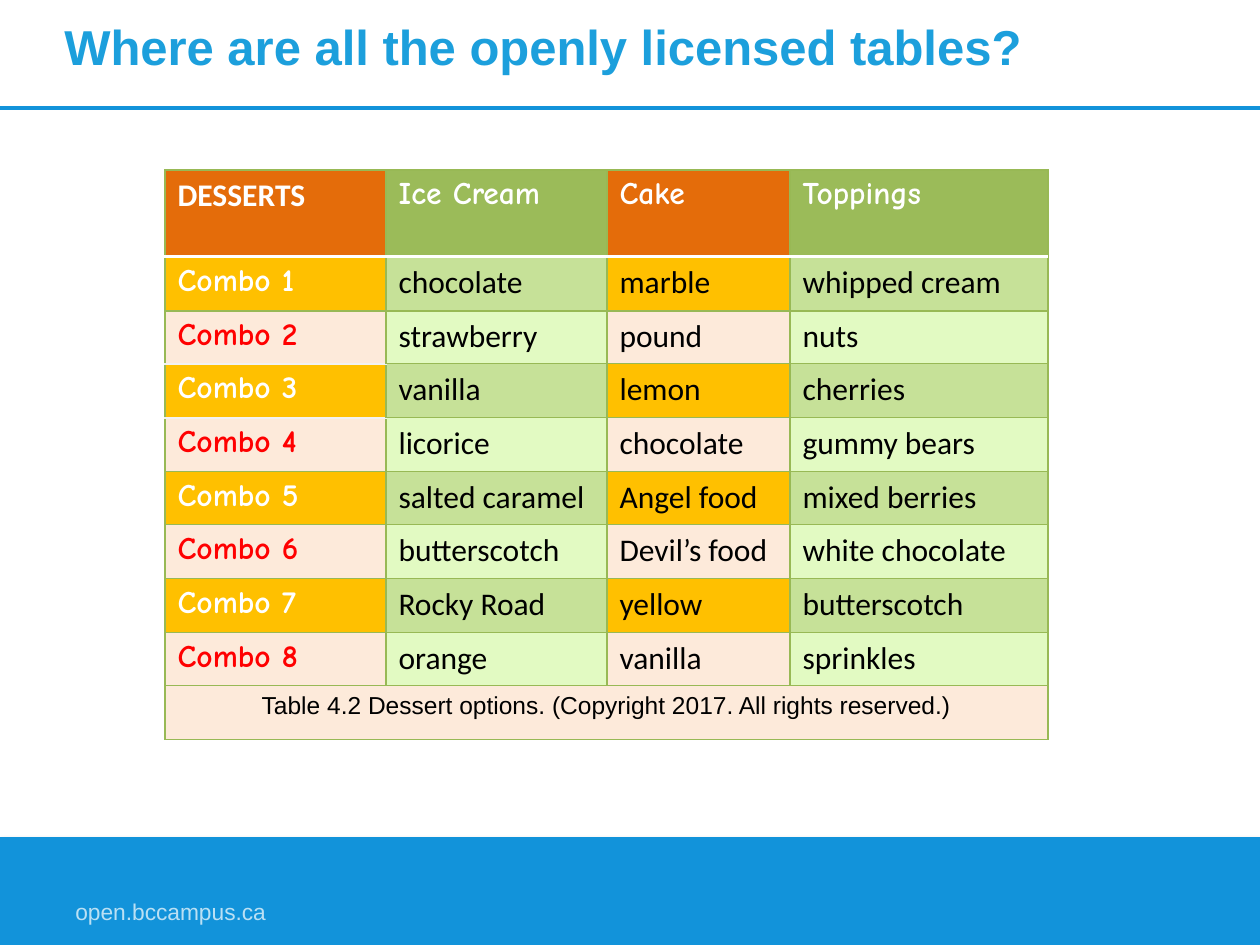
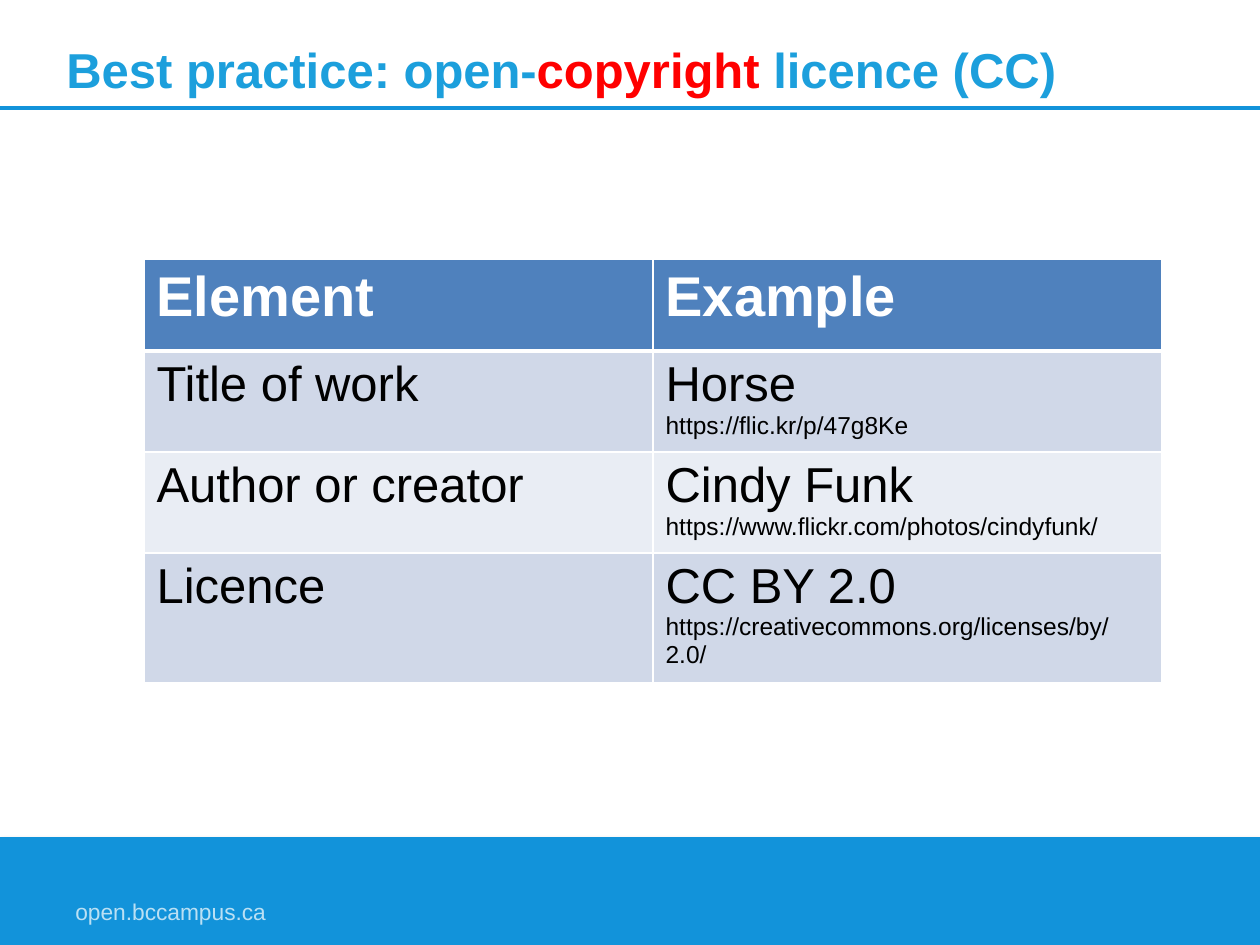
from dataclasses import dataclass
from itertools import cycle

from lxml.etree import SubElement
from pptx import Presentation
from pptx.dml.color import RGBColor
from pptx.enum.shapes import MSO_CONNECTOR, MSO_SHAPE
from pptx.enum.text import MSO_ANCHOR, PP_ALIGN
from pptx.oxml.ns import qn
from pptx.util import Emu, Pt

SCALE = 914400 / 126
WIDE, HIGH = 1260, 945


def px(n):
    return Emu(round(n * SCALE))


def share(total, count):
    """Split a length into whole parts that differ by one at most."""
    ends = [round(total * i / count) for i in range(count + 1)]
    return [b - a for a, b in zip(ends, ends[1:])]


@dataclass(frozen=True)
class Type:
    size: int
    color: str
    bold: bool = False
    face: str = "Arial"


@dataclass(frozen=True)
class Theme:
    white: str = "FFFFFF"
    blue: str = "1293DA"
    orange: str = "E46C0A"
    green: str = "9BBB59"
    gold: str = "FFC000"
    peach: str = "FDEADA"
    leaf: str = "C6E198"
    lime: str = "E2FAC2"
    steel: str = "4F81BD"
    mist: str = "D0D8E8"
    pale: str = "E9EDF4"
    grid: str = "98B955"
    soft: str = "F2F2F2"
    title: Type = Type(28, "1C9FDC", True)
    alert: Type = Type(28, "FF0000", True)
    foot: Type = Type(13, "BAE0F4")
    head: Type = Type(18, "FFFFFF", True, "Calibri")
    menu: Type = Type(18, "FFFFFF", True, "Comic Neue")
    even: Type = Type(18, "FF0000", True, "Comic Neue")
    food: Type = Type(18, "000000", False, "Calibri")
    note: Type = Type(14, "000000")
    label: Type = Type(32, "FFFFFF", True)
    body: Type = Type(28, "000000")


class Deck:
    def __init__(self, theme):
        self.theme = theme
        self.show = Presentation()
        self.show.slide_width, self.show.slide_height = px(WIDE), px(HIGH)
        self.slide = None

    def start(self, x, y, title):
        """Add a slide with its rule, footer band and title."""
        self.slide = self.show.slides.add_slide(self.show.slide_layouts[6])
        self.line(0, 108, WIDE, 108, self.theme.blue, 2)
        self.band(0, 837, WIDE, HIGH - 837, self.theme.blue)
        self.text(63, 895, 401, 50, [("open.bccampus.ca", self.theme.foot)], 0.9)
        self.text(x, y, 1109, 77, title, 0.7, MSO_ANCHOR.MIDDLE)

    def line(self, x1, y1, x2, y2, color, width):
        line = self.slide.shapes.add_connector(
            MSO_CONNECTOR.STRAIGHT, px(x1), px(y1), px(x2), px(y2))
        line.line.color.rgb = RGBColor.from_string(color)
        line.line.width = Pt(width)
        SubElement(line._element.spPr, qn("a:effectLst"))

    def band(self, x, y, w, h, color):
        band = self.slide.shapes.add_shape(
            MSO_SHAPE.RECTANGLE, px(x), px(y), px(w), px(h))
        band.fill.solid()
        band.fill.fore_color.rgb = RGBColor.from_string(color)
        band.line.fill.background()
        band.shadow.inherit = False
        glow = SubElement(
            band._element.spPr.find(qn("a:effectLst")), qn("a:outerShdw"),
            blurRad=str(Pt(3.1)), dist=str(Pt(1.8)), dir="5400000", rotWithShape="0")
        tone = SubElement(glow, qn("a:srgbClr"), val="000000")
        SubElement(tone, qn("a:alpha"), val="35000")

    def runs(self, para, parts):
        for words, kind in parts:
            run = para.add_run()
            run.text = words
            font = run.font
            font.name, font.size, font.bold = kind.face, Pt(kind.size), kind.bold
            font.color.rgb = RGBColor.from_string(kind.color)

    def text(self, x, y, w, h, parts, space, anchor=MSO_ANCHOR.TOP):
        frame = self.slide.shapes.add_textbox(px(x), px(y), px(w), px(h)).text_frame
        frame.word_wrap = True
        frame.vertical_anchor = anchor
        frame.paragraphs[0].line_spacing = space
        self.runs(frame.paragraphs[0], parts)

    def table(self, x, y, cols, rows, rule, lines):
        """Add an empty table; lines overrides rule by row edge or (row edge, column)."""
        table = self.slide.shapes.add_table(
            len(rows), len(cols), px(x), px(y), px(sum(cols)), px(sum(rows))).table
        table.first_row = table.horz_banding = False
        for col, w in zip(table.columns, cols):
            col.width = px(w)
        for row, h in zip(table.rows, rows):
            row.height = px(h)
        for r in range(len(rows)):
            for c in range(len(cols)):
                top, low = (lines.get((e, c), lines.get(e, rule)) for e in (r, r + 1))
                self.edges(table.cell(r, c), rule, rule, top, low)
        return table

    def edges(self, cell, *sides):
        props = cell._tc.get_or_add_tcPr()
        for side, (color, width) in zip("LRTB", sides):
            edge = SubElement(props, qn(f"a:ln{side}"), w=str(Pt(width)))
            SubElement(SubElement(edge, qn("a:solidFill")), qn("a:srgbClr"), val=color)

    def cell(self, cell, fill, *paras, align=None):
        cell.fill.solid()
        cell.fill.fore_color.rgb = RGBColor.from_string(fill)
        frame = cell.text_frame
        for i, part in enumerate(paras):
            para = frame.add_paragraph() if i else frame.paragraphs[0]
            para.alignment = align
            self.runs(para, [part])


MENU = [
    ("chocolate", "marble", "whipped cream"),
    ("strawberry", "pound", "nuts"),
    ("vanilla", "lemon", "cherries"),
    ("licorice", "chocolate", "gummy bears"),
    ("salted caramel", "Angel food", "mixed berries"),
    ("butterscotch", "Devil’s food", "white chocolate"),
    ("Rocky Road", "yellow", "butterscotch"),
    ("orange", "vanilla", "sprinkles"),
]
CREDIT = [
    ("Title of work", "Horse", "https://flic.kr/p/47g8Ke"),
    ("Author or creator", "Cindy Funk", "https://www.flickr.com/photos/cindyfunk/"),
    ("Licence", "CC BY 2.0", "https://creativecommons.org/licenses/by/2.0/"),
]


def desserts(deck):
    t = deck.theme
    deck.start(52, 15, [("Where are all the openly licensed tables?", t.title)])
    soft = (t.soft, 1)
    table = deck.table(165, 170, [221, 221, 183, 258], [87] + share(483, 9),
                       (t.grid, 0.75), {1: (t.white, 2), (3, 0): soft, (4, 0): soft})
    heads = ["DESSERTS", "Ice Cream", "Cake", "Toppings"]
    for c, (name, fill) in enumerate(zip(heads, cycle([t.orange, t.green]))):
        deck.cell(table.cell(0, c), fill, (name, t.menu if c else t.head))
    looks = cycle([(t.menu, t.gold, t.leaf), (t.even, t.peach, t.lime)])
    for r, (foods, (kind, *fills)) in enumerate(zip(MENU, looks), 1):
        for c, (name, fill) in enumerate(zip((f"Combo {r}", *foods), cycle(fills))):
            deck.cell(table.cell(r, c), fill, (name, t.food if c else kind))
    last = table.cell(9, 0)
    last.merge(table.cell(9, 3))
    deck.cell(last, t.peach, ("Table 4.2 Dessert options. (Copyright 2017. "
                              "All rights reserved.)", t.note), align=PP_ALIGN.CENTER)


def licence(deck):
    t = deck.theme
    deck.start(54, 38, [("Best practice: open-", t.title), ("copyright ", t.alert),
                        ("licence (CC)", t.title)])
    table = deck.table(144, 259, [509, 509], [92, 95, 95, 129],
                       (t.white, 1), {1: (t.white, 3)})
    for c, name in enumerate(["Element", "Example"]):
        deck.cell(table.cell(0, c), t.steel, (name, t.label))
    for r, ((name, value, link), fill) in enumerate(
            zip(CREDIT, cycle([t.mist, t.pale])), 1):
        deck.cell(table.cell(r, 0), fill, (name, t.body))
        deck.cell(table.cell(r, 1), fill, (value, t.body), (link, t.note))


def main():
    deck = Deck(Theme())
    desserts(deck)
    licence(deck)
    deck.show.save("out.pptx")


if __name__ == "__main__":
    main()
